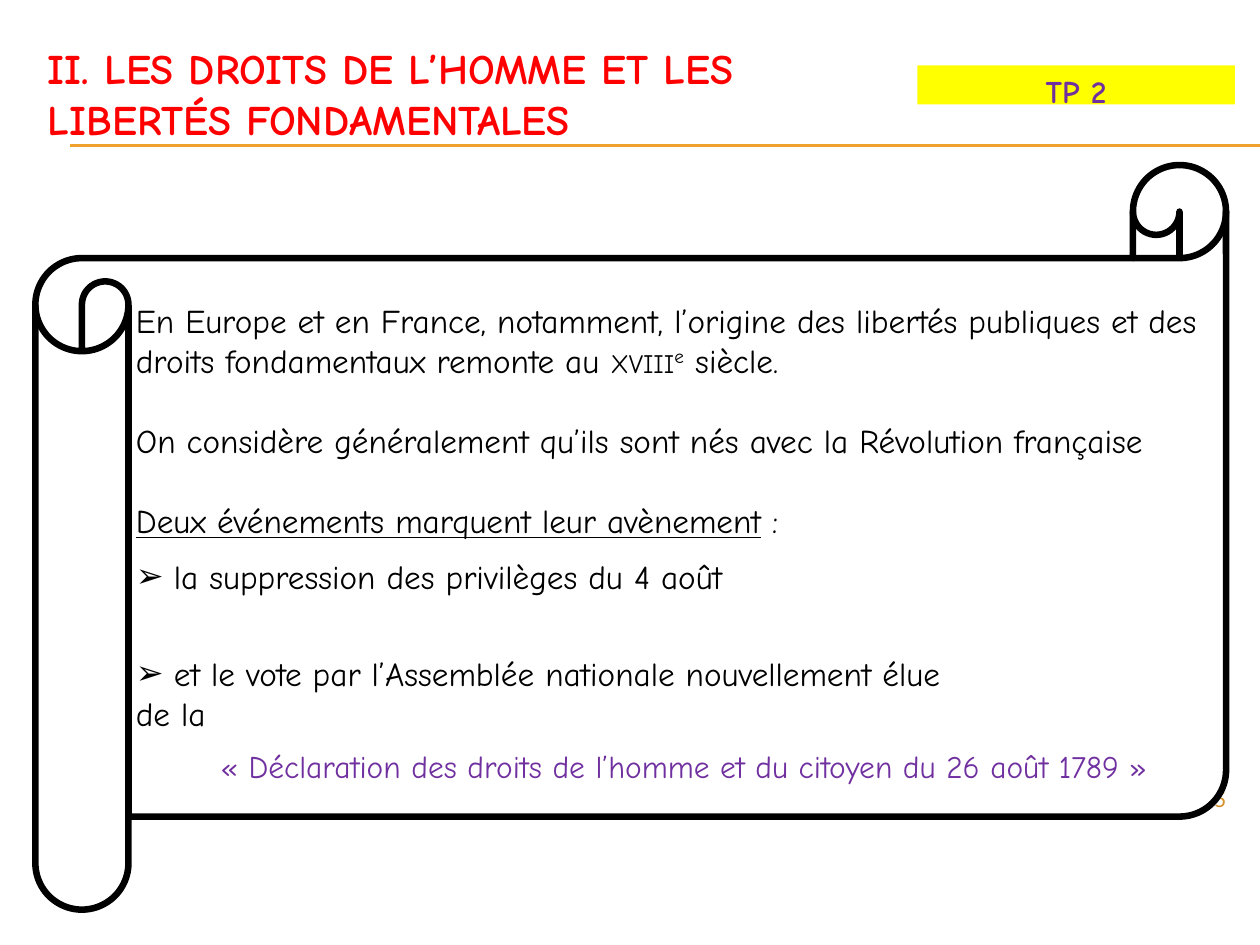
from lxml import etree
from pptx import Presentation
from pptx.dml.color import RGBColor
from pptx.enum.shapes import MSO_CONNECTOR, MSO_SHAPE
from pptx.enum.text import MSO_ANCHOR, MSO_AUTO_SIZE, PP_ALIGN
from pptx.oxml.ns import qn
from pptx.util import Pt


def color(code):
    return RGBColor.from_string(code)


def add_run(para, text, size, code, bold=False, face="Comic Neue"):
    run = para.add_run()
    run.text = text
    run.font.name = face
    run.font.size = Pt(size)
    run.font.bold = bold
    run.font.color.rgb = color(code)
    return run


prs = Presentation()
prs.slide_width, prs.slide_height = Pt(720), Pt(540)
slide = prs.slides.add_slide(prs.slide_layouts[5])
shapes = slide.shapes

# Double rule under the title
for y in (82.8, 83.5):
    rule = shapes.add_connector(MSO_CONNECTOR.STRAIGHT, Pt(40.3), Pt(y), Pt(720), Pt(y))
    rule.line.color.rgb = color("F0A22E")
    rule.line.width = Pt(0.75)
    etree.SubElement(rule._element.spPr, qn("a:effectLst"))

# Title
title = shapes.title
title.left, title.top, title.width, title.height = Pt(20.2), Pt(20.9), Pt(468), Pt(56.9)
frame = title.text_frame
frame.word_wrap = True
frame.auto_size = MSO_AUTO_SIZE.NONE
frame.vertical_anchor = MSO_ANCHOR.TOP
para = frame.paragraphs[0]
para.alignment = PP_ALIGN.LEFT
add_run(para, "II. LES DROITS DE L’HOMME ET LES LIBERTÉS FONDAMENTALES", 24, "FF0000", True)

# Body: each paragraph has a gap before, a bullet flag and styled runs
body = [
    (0, False, [
        ("En Europe et en France, notamment, l’origine des libertés publiques "
         "et des droits fondamentaux remonte au ", ""),
        ("xviii", "small"), ("e", "super"), (" siècle.", "")]),
    (22.8, False, [("On considère généralement qu’ils sont nés avec la Révolution française", "")]),
    (22.8, False, [("Deux événements marquent leur avènement", "under"), ("\N{NO-BREAK SPACE}:", "")]),
    (9.4, True, [("la suppression des privilèges du 4 août", "")]),
    (32.4, True, [("et le vote par l’Assemblée nationale nouvellement élue", "")]),
    (0, False, [("de la", "")]),
]
box = shapes.add_textbox(Pt(70.6), Pt(168.2), Pt(629.3), Pt(303))
frame = box.text_frame
frame.word_wrap = True
for i, (gap, bullet, runs) in enumerate(body):
    para = frame.add_paragraph() if i else frame.paragraphs[0]
    para.space_before = Pt(gap)
    if bullet:
        props = para._p.get_or_add_pPr()
        props.set("marL", str(Pt(21.7)))
        props.set("indent", str(-Pt(21.7)))
        etree.SubElement(props, qn("a:buFont")).set("typeface", "Arial")
        etree.SubElement(props, qn("a:buChar")).set("char", "➢")
    for text, style in runs:
        run = add_run(para, text, 19, "000000")
        if style == "under":
            run.font.underline = True
        elif style == "small":
            run._r.get_or_add_rPr().set("cap", "small")
        elif style == "super":
            run._r.get_or_add_rPr().set("baseline", "30000")

# Page number
box = shapes.add_textbox(Pt(648), Pt(447.1), Pt(59.8), Pt(19.4))
box.text_frame.word_wrap = True
box.text_frame.vertical_anchor = MSO_ANCHOR.MIDDLE
para = box.text_frame.paragraphs[0]
para.alignment = PP_ALIGN.RIGHT
add_run(para, "5", 12, "D48F29", face="Lato")

# Name of the declaration
box = shapes.add_textbox(Pt(118.8), Pt(423.4), Pt(601.2), Pt(28.8))
box.text_frame.word_wrap = True
add_run(box.text_frame.paragraphs[0],
        "«\N{NO-BREAK SPACE}Déclaration des droits de l’homme et du citoyen "
        "du 26 août 1789\N{NO-BREAK SPACE}»", 18, "7030A0")

# Session tag
tag = shapes.add_shape(MSO_SHAPE.RECTANGLE, Pt(524.2), Pt(37.4), Pt(181.4), Pt(22.3))
tag.shadow.inherit = False
tag.fill.solid()
tag.fill.fore_color.rgb = color("FFFF00")
tag.line.fill.background()
tag.text_frame.vertical_anchor = MSO_ANCHOR.TOP
para = tag.text_frame.paragraphs[0]
para.alignment = PP_ALIGN.CENTER
add_run(para, "TP 2", 18, "7030A0", True)

# Scroll outline
scroll = shapes.add_shape(MSO_SHAPE.HORIZONTAL_SCROLL, Pt(20.2), Pt(94.3), Pt(680.4), Pt(425.5))
scroll.shadow.inherit = False
scroll.fill.background()
scroll.line.color.rgb = color("000000")
scroll.line.width = Pt(3.75)

prs.save("out.pptx")
